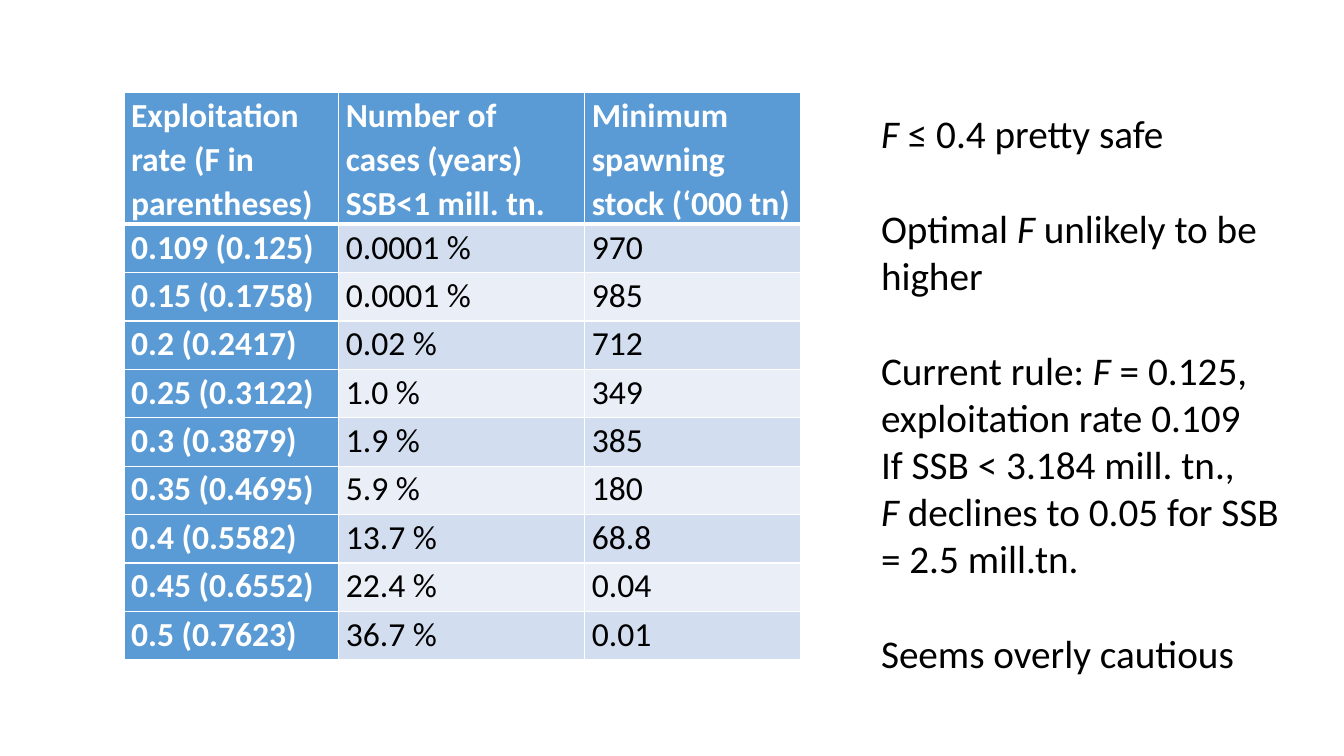
"""Build a slide comparing exploitation rates with spawning stock risk."""
from dataclasses import dataclass

from lxml import etree
from pptx import Presentation
from pptx import util as u
from pptx.dml.color import RGBColor
from pptx.enum import text as t
from pptx.oxml import ns


@dataclass(frozen=True)
class Theme:
    font: str = "Calibri"
    white: str = "FFFFFF"
    black: str = "000000"
    heading: str = "5B9BD5"
    bands: tuple = ("EAEFF7", "D2DEEF")
    table_size: int = 24
    finding_size: int = 28


theme = Theme()


def write(paragraph, content, size, color, bold=False, spacing=None, before=0):
    """Write text into a paragraph, with the parts between asterisks in italics."""
    paragraph.alignment = t.PP_ALIGN.LEFT
    paragraph.line_spacing = spacing
    paragraph.space_before = u.Pt(before)
    for index, part in enumerate(content.split("*")):
        if part:
            run = paragraph.add_run()
            run.text = part
            run.font.name = theme.font
            run.font.size = u.Pt(size)
            run.font.bold = bold
            run.font.italic = index % 2 == 1
            run.font.color.rgb = RGBColor.from_string(color)


def set_borders(cell, widths):
    """Give a cell white borders with the width in points for each side."""
    properties = cell._tc.get_or_add_tcPr()
    for position, (side, width) in enumerate(widths.items()):
        line = etree.Element(ns.qn(f"a:ln{side}"), w=str(u.Pt(width)))
        fill = etree.SubElement(line, ns.qn("a:solidFill"))
        etree.SubElement(fill, ns.qn("a:srgbClr"), val=theme.white)
        properties.insert(position, line)


presentation = Presentation()
presentation.slide_width = u.Inches(13.33)
presentation.slide_height = u.Inches(7.5)
slide = presentation.slides.add_slide(presentation.slide_layouts[6])

risk_rows = [
    ("Exploitation rate (F in parentheses)", "Number of cases (years) SSB<1 mill. tn.",
     "Minimum spawning stock (‘000 tn)"),
    ("0.109 (0.125)", "0.0001 %", "970"),
    ("0.15 (0.1758)", "0.0001 %", "985"),
    ("0.2 (0.2417)", "0.02 %", "712"),
    ("0.25 (0.3122)", "1.0 %", "349"),
    ("0.3 (0.3879)", "1.9 %", "385"),
    ("0.35 (0.4695)", "5.9 %", "180"),
    ("0.4 (0.5582)", "13.7 %", "68.8"),
    ("0.45 (0.6552)", "22.4 %", "0.04"),
    ("0.5 (0.7623)", "36.7 %", "0.01"),
]
column_widths = (2.13, 2.44, 2.14)
risk_table = slide.shapes.add_table(
    len(risk_rows), len(column_widths),
    u.Inches(1.23), u.Inches(0.92), u.Inches(6.71), u.Inches(5.53)).table
risk_table.first_row = False
risk_table.horz_banding = False
for column, width in zip(risk_table.columns, column_widths):
    column.width = u.Inches(width)

for row, values in enumerate(risk_rows):
    risk_table.rows[row].height = u.Inches(0.48 if row else 1.21)
    for column, value in enumerate(values):
        cell = risk_table.cell(row, column)
        is_heading = row == 0 or column == 0
        cell.margin_left = cell.margin_right = u.Inches(0.07)
        cell.margin_top = cell.margin_bottom = 0
        cell.fill.solid()
        cell.fill.fore_color.rgb = RGBColor.from_string(
            theme.heading if is_heading else theme.bands[row % 2])
        set_borders(cell, {"L": 1, "R": 1, "T": 3 if row == 1 else 1, "B": 1 if row else 3})
        write(cell.text_frame.paragraphs[0], value, theme.table_size,
              theme.white if is_heading else theme.black, bold=is_heading, spacing=1.07)

finding_groups = [
    ["*F* ≤ 0.4 pretty safe"],
    ["Optimal *F *unlikely to be", "higher"],
    ["Current rule: *F* = 0.125,", "exploitation rate 0.109", "If SSB < 3.184 mill. tn.,",
     "*F *declines to 0.05 for SSB", "= 2.5 mill.tn."],
    ["Seems overly cautious"],
]
findings = slide.shapes.add_textbox(
    u.Inches(8.64), u.Inches(1.04), u.Inches(4.2), u.Inches(5.76)).text_frame
findings.word_wrap = False
findings.auto_size = t.MSO_AUTO_SIZE.SHAPE_TO_FIT_TEXT
for group_index, group in enumerate(finding_groups):
    for line_index, content in enumerate(group):
        starts_group = line_index == 0
        is_first = starts_group and group_index == 0
        paragraph = findings.paragraphs[0] if is_first else findings.add_paragraph()
        write(paragraph, content, theme.finding_size, theme.black,
              before=34 if starts_group and not is_first else 0)

presentation.save("out.pptx")
